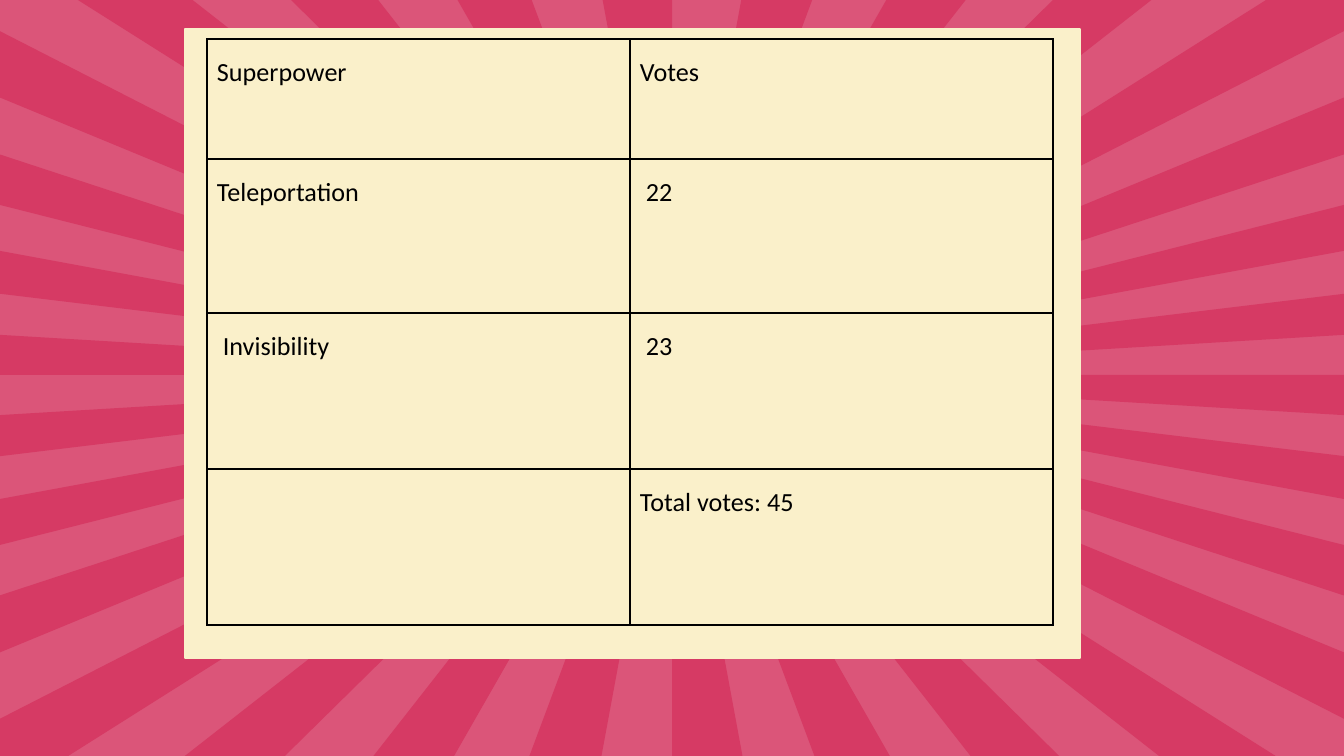
import math

from lxml import etree
from pptx import Presentation
from pptx.dml.color import RGBColor
from pptx.enum.shapes import MSO_SHAPE
from pptx.oxml.ns import qn
from pptx.util import Pt

RECTANGLE = MSO_SHAPE.RECTANGLE
PX = 914400 / 134.4

# Content
ROWS = [
    ("Superpower", "Votes"),
    ("Teleportation", " 22"),
    (" Invisibility", " 23"),
    ("", "Total votes: 45"),
]

# Layout in px
SLIDE_SIZE = (1344, 756)
BURST_CENTER = (672, 375)
BURST_HALF = (681, 387)
RAY_COUNT = 30
RAY_ANGLE = 6
PANEL = (185, 29, 895, 629)
TABLE_LEFT, TABLE_TOP = 207, 39
COLUMN_WIDTH = 423
ROW_HEIGHTS = [120, 154, 156, 156]
MARGIN_X, MARGIN_Y = 10, 13

# Style
PINK, CRIMSON, CREAM, BLACK = "DB5579", "D63A64", "FAF0CA", "000000"
FONT, FONT_SIZE, LINE_SPACING = "Calibri", 14, 1.15


def emu(px):
    return round(px * PX)


def color(value):
    return RGBColor.from_string(value)


def burst_point(degrees):
    """Point on the burst's edge: a unit square stretched to the burst."""
    x, y = math.cos(math.radians(degrees)), math.sin(math.radians(degrees))
    reach = max(abs(x), abs(y))
    return (emu(BURST_CENTER[0] + BURST_HALF[0] * x / reach),
            emu(BURST_CENTER[1] + BURST_HALF[1] * y / reach))


def add_ray(slide, start):
    # The middle point keeps the corner of rays that cross one
    points = [burst_point(start + step * RAY_ANGLE / 2) for step in range(3)]
    builder = slide.shapes.build_freeform(*map(emu, BURST_CENTER))
    builder.add_line_segments(points, close=True)
    ray = builder.convert_to_shape()
    ray.fill.solid()
    ray.fill.fore_color.rgb = color(CRIMSON)
    ray.line.fill.background()
    ray.shadow.inherit = False


def add_borders(cell):
    properties = cell._tc.get_or_add_tcPr()
    for side in ("lnL", "lnR", "lnT", "lnB"):
        line = etree.SubElement(properties, qn(f"a:{side}"), w=str(Pt(1)))
        fill = etree.SubElement(line, qn("a:solidFill"))
        etree.SubElement(fill, qn("a:srgbClr"), val=BLACK)


def fill_cell(cell, text):
    add_borders(cell)
    cell.fill.background()
    cell.margin_left = cell.margin_right = emu(MARGIN_X)
    cell.margin_top = cell.margin_bottom = emu(MARGIN_Y)
    if text:
        paragraph = cell.text_frame.paragraphs[0]
        paragraph.line_spacing = LINE_SPACING
        run = paragraph.add_run()
        run.text = text
        run.font.name = FONT
        run.font.size = Pt(FONT_SIZE)
        run.font.color.rgb = color(BLACK)


def main():
    presentation = Presentation()
    presentation.slide_width, presentation.slide_height = map(emu, SLIDE_SIZE)
    slide = presentation.slides.add_slide(presentation.slide_layouts[6])

    # Sunburst background
    slide.background.fill.solid()
    slide.background.fill.fore_color.rgb = color(PINK)
    for index in range(RAY_COUNT):
        add_ray(slide, index * 2 * RAY_ANGLE)

    # Cream panel
    panel = slide.shapes.add_shape(RECTANGLE, *map(emu, PANEL))
    panel.fill.solid()
    panel.fill.fore_color.rgb = color(CREAM)
    panel.line.color.rgb = color(CREAM)
    panel.line.width = Pt(0.75)
    panel.shadow.inherit = False

    # Votes table
    column_count = len(ROWS[0])
    table = slide.shapes.add_table(
        len(ROWS), column_count, emu(TABLE_LEFT), emu(TABLE_TOP),
        emu(COLUMN_WIDTH * column_count), emu(sum(ROW_HEIGHTS))).table
    table.first_row = table.horz_banding = False
    for column in table.columns:
        column.width = emu(COLUMN_WIDTH)
    for row, height, texts in zip(table.rows, ROW_HEIGHTS, ROWS):
        row.height = emu(height)
        for cell, text in zip(row.cells, texts):
            fill_cell(cell, text)

    presentation.save("out.pptx")


if __name__ == "__main__":
    main()
